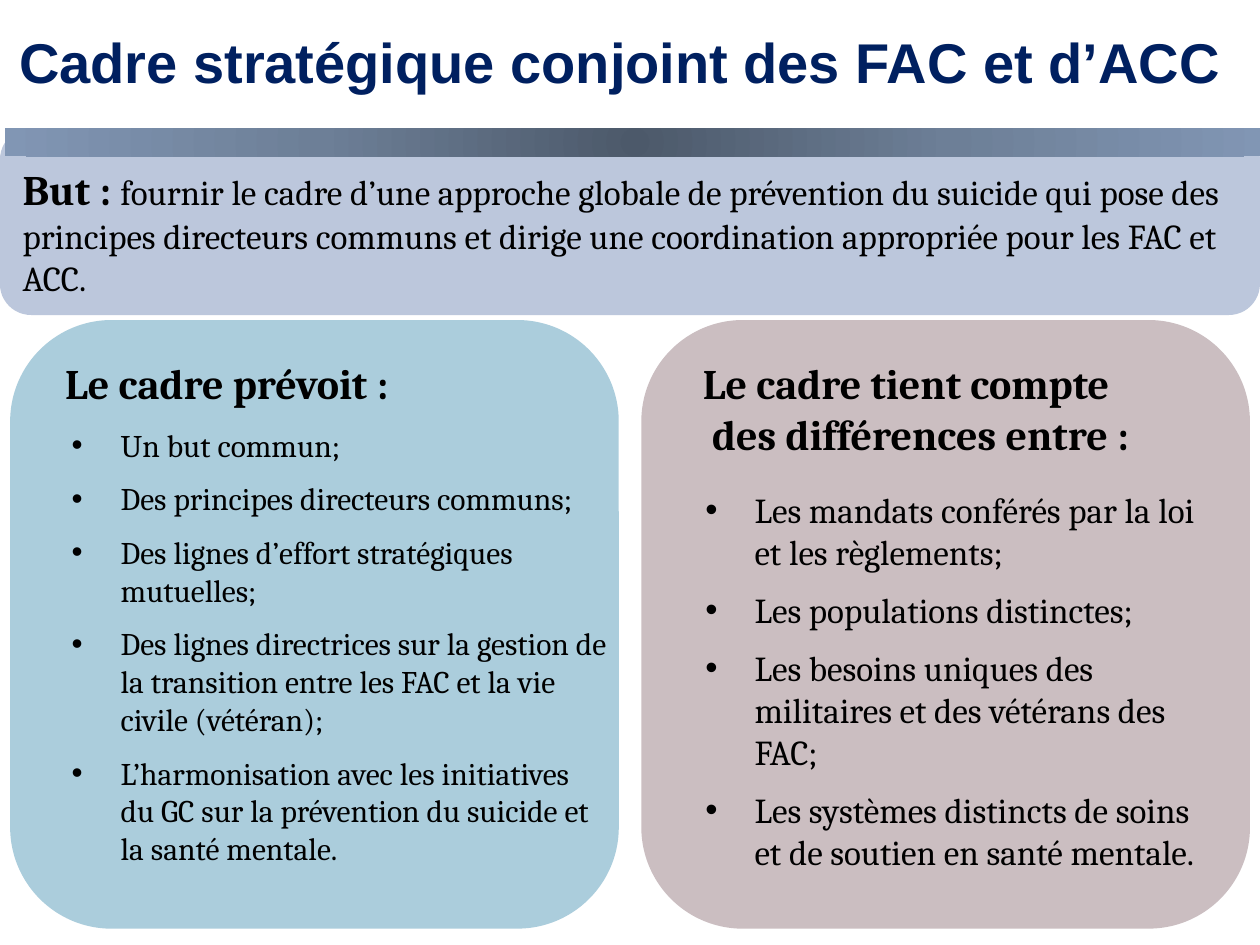
"""Build the joint strategic framework slide."""
from dataclasses import dataclass
from typing import Optional

from lxml.etree import SubElement
from pptx import Presentation
from pptx.dml.color import RGBColor as Color
from pptx.enum.shapes import MSO_SHAPE as Preset
from pptx.enum.text import PP_ALIGN as Align
from pptx.oxml.ns import qn
from pptx.util import Pt


@dataclass(frozen=True)
class Theme:
    title: str = "002060"
    ink: str = "000000"
    banner: str = "BCC7DC"
    provides: str = "ABCDDC"
    differences: str = "CBBEC1"
    bar: tuple = ((0, "4C596A"), (50, "6D7F97"), (100, "8196B4"))
    title_font: str = "Arial"
    body_font: str = "Cambria"
    title_size: float = 32
    heading_size: float = 24
    body_size: float = 20
    small_size: float = 18


@dataclass(frozen=True)
class Box:
    left: float
    top: float
    width: float
    height: float

    def lengths(self) -> tuple:
        return tuple(Pt(n) for n in (self.left, self.top, self.width, self.height))


@dataclass(frozen=True)
class Run:
    text: str
    size: float
    bold: bool = False
    font: str = Theme.body_font
    color: str = Theme.ink


@dataclass(frozen=True)
class Line:
    runs: tuple
    bullet: bool = False
    indent: float = 0
    align: Optional[Align] = None


@dataclass(frozen=True)
class Panel:
    box: Box
    fill: str
    heading_box: Box
    heading: tuple
    list_box: Box
    items: tuple
    item_size: float


THEME = Theme()
PANEL_TOP, PANEL_SIDE, HEADING_TOP = 182.9, 347.8, 200.9
BULLET_INDENT, BULLET_HANG = 49.7, 28.1

PANELS = (
    Panel(
        Box(366.5, PANEL_TOP, PANEL_SIDE, PANEL_SIDE), THEME.differences,
        Box(394.6, HEADING_TOP, 270, 87),
        (Line((Run("Le cadre tient compte", THEME.heading_size, True),)),
         Line((Run("des différences entre\u00a0:", THEME.heading_size, True),), indent=5.3)),
        Box(374.4, 275.8, 332, 277),
        ("Les mandats conférés par la loi et les règlements;",
         "Les populations distinctes;",
         "Les besoins uniques des militaires et des vétérans des FAC;",
         "Les systèmes distincts de soins et de soutien en santé mentale."),
        THEME.body_size),
    Panel(
        Box(5.8, PANEL_TOP, PANEL_SIDE, PANEL_SIDE), THEME.provides,
        Box(30.2, HEADING_TOP, 299.5, 58),
        (Line((Run("Le cadre prévoit :", THEME.heading_size, True),)),),
        Box(12.2, 239.8, 342.5, 306),
        ("Un but commun;",
         "Des principes directeurs communs;",
         "Des lignes d’effort stratégiques mutuelles;",
         "Des lignes directrices sur la gestion de la transition entre les FAC "
         "et la vie civile (vétéran);",
         "L’harmonisation avec les initiatives du GC sur la prévention du suicide "
         "et la santé mentale."),
        THEME.small_size),
)


def add_block(slide, preset: Preset, box: Box, fill: str):
    shape = slide.shapes.add_shape(preset, *box.lengths())
    shape.shadow.inherit = False
    shape.line.fill.background()
    shape.fill.solid()
    shape.fill.fore_color.rgb = Color.from_string(fill)
    return shape


def add_radial_bar(slide, box: Box, stops: tuple) -> None:
    shape = add_block(slide, Preset.RECTANGLE, box, stops[0][1])
    shape.fill.gradient()
    gradient = shape._element.spPr.find(qn("a:gradFill"))
    for child in list(gradient):
        gradient.remove(child)
    stop_list = SubElement(gradient, qn("a:gsLst"))
    for percent, color in stops:
        stop = SubElement(stop_list, qn("a:gs"), pos=str(percent * 1000))
        SubElement(stop, qn("a:srgbClr"), val=color)
    radial = SubElement(gradient, qn("a:path"), path="circle")
    SubElement(radial, qn("a:fillToRect"), dict.fromkeys("ltrb", "50000"))


def set_indent(paragraph, left: float, first: float) -> None:
    properties = paragraph._p.get_or_add_pPr()
    properties.set("marL", str(Pt(left)))
    properties.set("indent", str(Pt(first)))


def add_bullet(paragraph) -> None:
    set_indent(paragraph, BULLET_INDENT, -BULLET_HANG)
    properties = paragraph._p.get_or_add_pPr()
    SubElement(properties, qn("a:buFont"), typeface=THEME.title_font)
    SubElement(properties, qn("a:buChar"), char="•")


def add_text(slide, box: Box, lines: tuple) -> None:
    frame = slide.shapes.add_textbox(*box.lengths()).text_frame
    frame.word_wrap = True
    for index, line in enumerate(lines):
        paragraph = frame.add_paragraph() if index else frame.paragraphs[0]
        if line.align is not None:
            paragraph.alignment = line.align
        if line.indent:
            set_indent(paragraph, line.indent, 0)
        if line.bullet:
            add_bullet(paragraph)
            paragraph.space_before = Pt(6 if index else 0)
            paragraph.space_after = Pt(3)
        for part in line.runs:
            run = paragraph.add_run()
            run.text = part.text
            run.font.name = part.font
            run.font.size = Pt(part.size)
            run.font.bold = part.bold
            run.font.color.rgb = Color.from_string(part.color)


def add_panel(slide, panel: Panel) -> None:
    add_block(slide, Preset.ROUNDED_RECTANGLE, panel.box, panel.fill)
    add_text(slide, panel.heading_box, panel.heading)
    items = tuple(Line((Run(item, panel.item_size),), bullet=True) for item in panel.items)
    add_text(slide, panel.list_box, items)


def main() -> None:
    presentation = Presentation()
    presentation.slide_width, presentation.slide_height = Pt(720), Pt(540)
    slide = presentation.slides.add_slide(presentation.slide_layouts[6])

    for panel in PANELS:
        add_panel(slide, panel)
    title = Run("Cadre stratégique conjoint des FAC et d’ACC", THEME.title_size, True,
                THEME.title_font, THEME.title)
    add_text(slide, Box(0, 12.2, 709, 44), (Line((title,), align=Align.CENTER),))

    add_block(slide, Preset.ROUNDED_RECTANGLE, Box(0, 73.4, 720, 106.6), THEME.banner)
    goal = (Run("But\u00a0: ", THEME.heading_size, True),
            Run("fournir le cadre d’une approche globale de prévention du suicide qui pose "
                "des principes directeurs communs et dirige une coordination appropriée "
                "pour les FAC et ACC.", THEME.body_size))
    add_text(slide, Box(5.8, 90, 714.2, 106.6), (Line(goal),))
    add_radial_bar(slide, Box(2.9, 73.4, 720, 15.8), THEME.bar)
    presentation.save("out.pptx")


if __name__ == "__main__":
    main()
